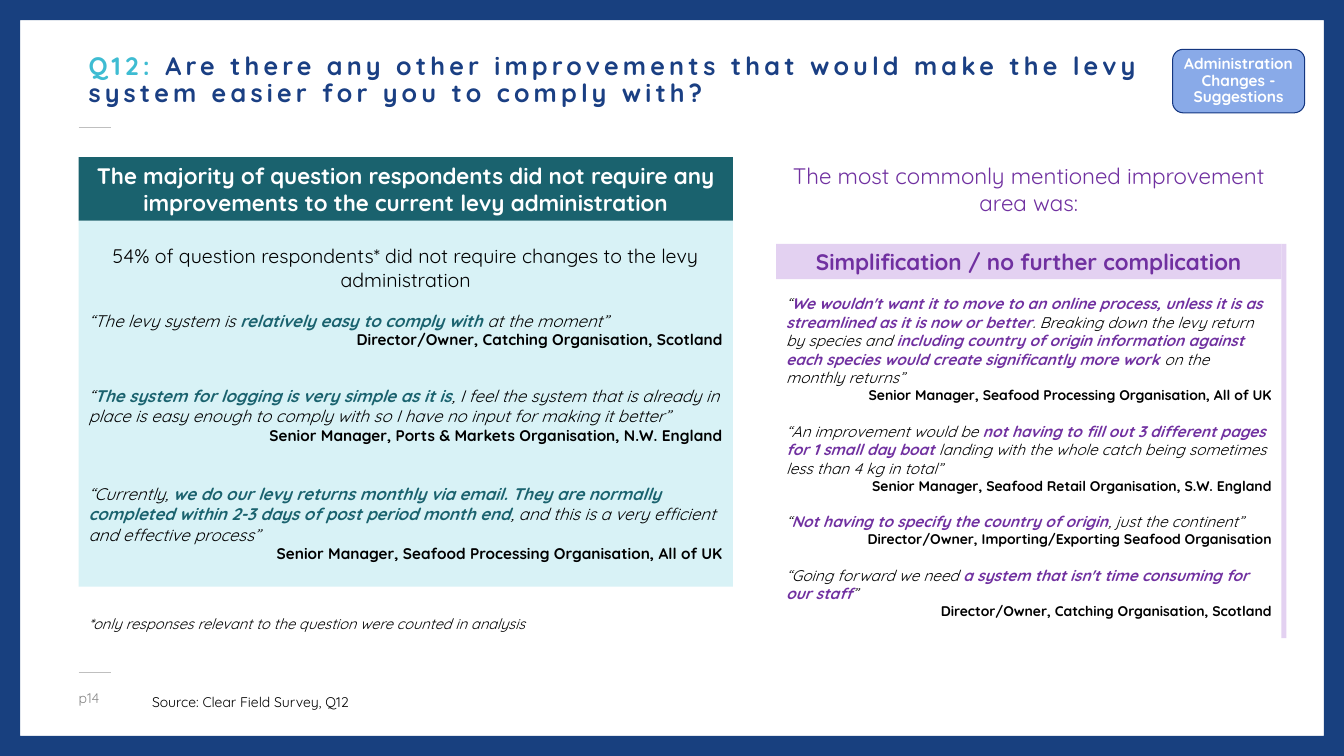
from lxml.etree import SubElement
from pptx import Presentation
from pptx.dml.color import RGBColor
from pptx.enum.shapes import MSO_CONNECTOR, MSO_SHAPE
from pptx.enum.text import MSO_ANCHOR, PP_ALIGN
from pptx.oxml.ns import qn
from pptx.util import Inches, Pt

WIDE, HIGH = 13.33, 7.5
EDGE = 0.2
NAVY, TEAL, PURPLE, LILAC = "18407F", "1A626E", "7030A0", "E3D1F1"
CENTER, RIGHT = PP_ALIGN.CENTER, PP_ALIGN.RIGHT

# Columns as (left, width) and rows as (top, height), in percent of the slide
LEFT_COL = (5.85, 48.69)
RIGHT_COL = (57.76, 37.58)
HEAD_ROW = (6.53, 8.4)

# Each quote: words, speaker, space before in points
LEVY_QUOTES = [
    ("“The levy system is |relatively easy to comply with |at the moment”",
     "Director/Owner, Catching Organisation, Scotland", 13.5),
    ("“|The system for logging is very simple as it is|, I feel the system that is "
     "already in place is easy enough to comply with so I have no input for making it better”",
     "Senior Manager, Ports & Markets Organisation, N.W. England", 26),
    ("“Currently, |we do our levy returns monthly via email. They are normally completed "
     "within 2-3 days of post period month end|, and this is a very efficient and "
     "effective process”",
     "Senior Manager, Seafood Processing Organisation, All of UK", 28.5),
]
SIMPLE_QUOTES = [
    ("“|We wouldn't want it to move to an online process, unless it is as streamlined as "
     "it is now or better|. Breaking down the levy return by species and |including country "
     "of origin information against each species would create significantly more work| on "
     "the monthly returns”",
     "Senior Manager, Seafood Processing Organisation, All of UK", 0),
    ("“An improvement would be |not having to fill out 3 different pages for 1 small day "
     "boat |landing with the whole catch being sometimes less than 4 kg in total”",
     "Senior Manager, Seafood Retail Organisation, S.W. England", 13),
    ("“|Not having to specify the country of origin|, just the continent”",
     "Director/Owner, Importing/Exporting Seafood Organisation", 13),
    ("“Going forward we need |a system that isn't time consuming for our staff|”",
     "Director/Owner, Catching Organisation, Scotland", 13),
]


def color(code):
    return RGBColor.from_string(code)


def across(share):
    return Inches(WIDE * share / 100)


def down(share):
    return Inches(HIGH * share / 100)


def place(col, row):
    return across(col[0]), down(row[0]), across(col[1]), down(row[1])


def add_box(slide, col, row, fill, kind=MSO_SHAPE.RECTANGLE, edge=None):
    box = slide.shapes.add_shape(kind, *place(col, row))
    box.shadow.inherit = False
    box.fill.solid()
    box.fill.fore_color.rgb = color(fill)
    if edge:
        box.line.color.rgb = color(edge)
        box.line.width = Pt(0.75)
    else:
        box.line.fill.background()
    box.text_frame.vertical_anchor = MSO_ANCHOR.MIDDLE
    return box.text_frame


def add_label(slide, col, row, anchor=MSO_ANCHOR.TOP):
    frame = slide.shapes.add_textbox(*place(col, row)).text_frame
    frame.word_wrap = True
    frame.vertical_anchor = anchor
    return frame


def pad(frame, side, end):
    frame.margin_left = frame.margin_right = Inches(side)
    frame.margin_top = frame.margin_bottom = Inches(end)


def write(frame, text, size, ink="000000", accent=None, bold=False, strong=True,
          italic=False, align=PP_ALIGN.LEFT, before=0, line=1.0, track=0):
    """Add a paragraph; parts between bars take the accent colour and weight."""
    para = frame.paragraphs[0]
    if para.runs:
        para = frame.add_paragraph()
    para.alignment = align
    para.space_before = Pt(before)
    para.line_spacing = line
    for i, part in enumerate(text.split("|")):
        if not part:
            continue
        marked = i % 2 == 1
        run = para.add_run()
        run.text = part
        font = run.font
        font.name, font.size, font.italic = "Quicksand", Pt(size), italic
        font.bold = strong if marked else bold
        font.color.rgb = color(accent if marked else ink)
        if track:
            run._r.get_or_add_rPr().set("spc", str(track * 100))


def add_quotes(frame, quotes, accent, size, small):
    for quote, who, gap in quotes:
        write(frame, quote, size, accent=accent, italic=True, before=gap)
        write(frame, who, small, bold=True, align=RIGHT)


def add_rule(slide, top):
    left, y = across(LEFT_COL[0]), down(top)
    rule = slide.shapes.add_connector(MSO_CONNECTOR.STRAIGHT, left, y, left + across(2.4), y)
    rule.line.color.rgb = color("BFBFBF")
    rule.line.width = Pt(0.5)
    SubElement(rule._element.spPr, qn("a:effectLst"))


def add_border(slide):
    add_box(slide, (0, 100), (0, 100), NAVY, MSO_SHAPE.FRAME)
    slide.shapes[-1].adjustments[0] = EDGE / HIGH


def add_header(slide):
    title = add_label(slide, (5.85, 81.17), HEAD_ROW, MSO_ANCHOR.MIDDLE)
    write(title, "|Q12: |Are there any other improvements that would make the levy system "
          "easier for you to comply with?", 18, ink="1A3F83", accent="3EBCD2",
          bold=True, line=0.9, track=3)
    badge = add_box(slide, (87.25, 9.83), HEAD_ROW, "89AAE8",
                    MSO_SHAPE.ROUNDED_RECTANGLE, "143680")
    pad(badge, 0.04, 0.05)
    write(badge, "Administration Changes - Suggestions", 11, ink="FFFFFF", bold=True,
          align=CENTER, line=0.9)


def add_majority(slide):
    panel = add_box(slide, LEFT_COL, (29.2, 48.4), "D8F2F6")
    write(panel, "54% of question respondents* did not require changes to the levy "
          "administration", 14, align=CENTER)
    add_quotes(panel, LEVY_QUOTES, TEAL, 12, 11)
    head = add_box(slide, LEFT_COL, (20.8, 8.4), TEAL)
    write(head, "The majority of question respondents did not require any improvements to "
          "the current levy administration", 16, ink="FFFFFF", bold=True, align=CENTER)
    note = add_label(slide, LEFT_COL, (80.67, 3.87))
    write(note, "*only responses relevant to the question were counted in analysis", 10.5,
          italic=True)


def add_common(slide):
    lead = add_label(slide, RIGHT_COL, (20.8, 8.53))
    write(lead, "The most commonly mentioned improvement area was:", 16, ink=PURPLE,
          align=CENTER)
    head = add_box(slide, RIGHT_COL, (32.27, 4.67), LILAC)
    write(head, "Simplification / no further complication", 16, ink=PURPLE, bold=True,
          align=CENTER)
    add_box(slide, (sum(RIGHT_COL), 0.38), (32.27, 52.13), LILAC)
    body = add_label(slide, RIGHT_COL, (38.27, 49.87))
    add_quotes(body, SIMPLE_QUOTES, PURPLE, 11, 10)


def add_footer(slide):
    page = add_label(slide, (5.85, 3.75), (91.47, 2.8))
    pad(page, 0, 0)
    write(page, "p|14", 10, ink="808080", accent="8C8C8C", strong=False, line=0.9)
    source = add_label(slide, (10.58, 47.19), (91.07, 3.6), MSO_ANCHOR.MIDDLE)
    write(source, "Source: Clear Field Survey, Q12", 10)


def main():
    deck = Presentation()
    deck.slide_width, deck.slide_height = Inches(WIDE), Inches(HIGH)
    slide = deck.slides.add_slide(deck.slide_layouts[6])
    add_border(slide)
    for top in (16.8, 88.93):
        add_rule(slide, top)
    add_header(slide)
    add_majority(slide)
    add_common(slide)
    add_footer(slide)
    deck.save("out.pptx")


if __name__ == "__main__":
    main()
